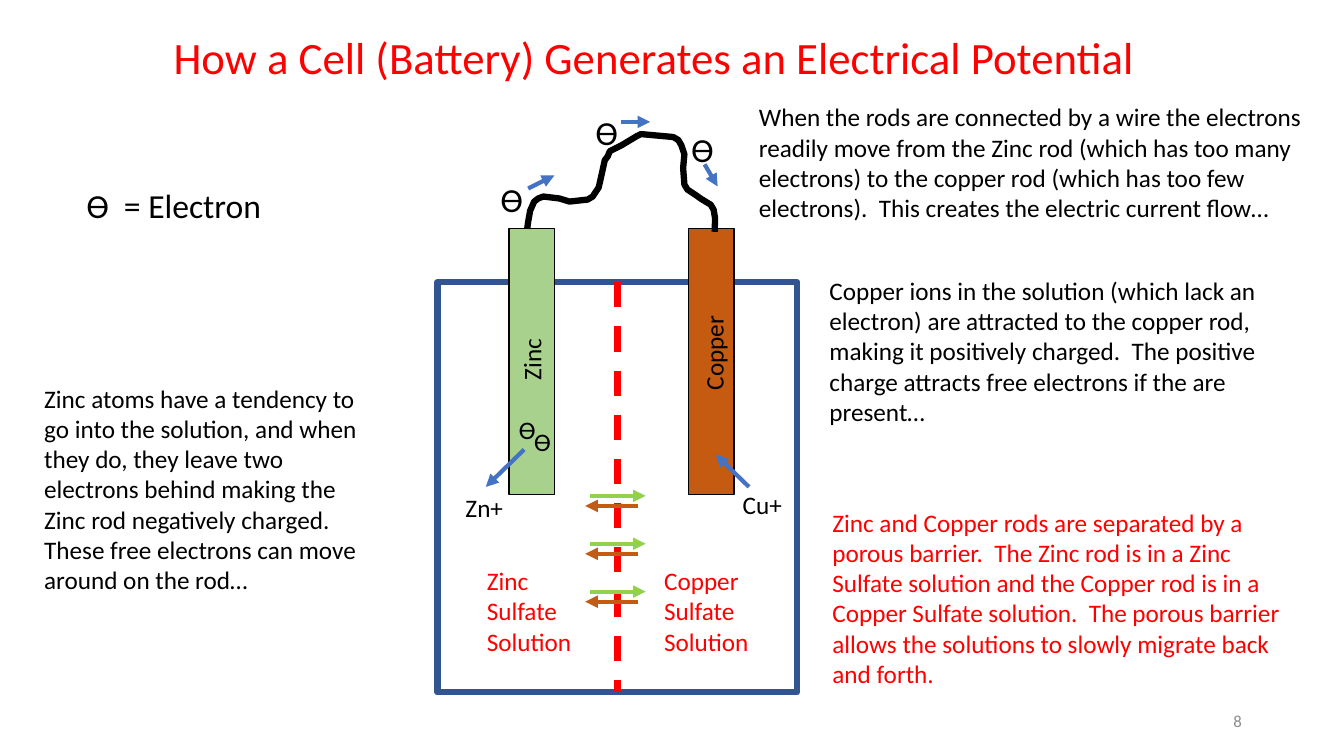
from dataclasses import dataclass

from lxml.etree import SubElement
from pptx import Presentation
from pptx.dml.color import RGBColor
from pptx.enum.dml import MSO_LINE
from pptx.enum.shapes import MSO_CONNECTOR, MSO_SHAPE
from pptx.enum.text import MSO_ANCHOR, MSO_AUTO_SIZE, PP_ALIGN
from pptx.oxml.ns import qn
from pptx.util import Pt


@dataclass(frozen=True)
class Theme:
    font: str = "Calibri"
    black: str = "000000"
    red: str = "FF0000"
    gray: str = "8C8C8C"
    tank: str = "325491"
    zinc: str = "A9D18E"
    copper: str = "C55A11"
    green: str = "92D050"
    blue: str = "4472C4"
    title: int = 32
    large: int = 24
    body: int = 18
    small: int = 12
    heavy: float = 4.5
    arrow: float = 3
    thin: float = 1


class CellSlide:
    def __init__(self, slide, theme):
        self.shapes = slide.shapes
        self.theme = theme

    def text(self, text, left, top, width, height, *, size=None, color=None,
             align=PP_ALIGN.LEFT, anchor=MSO_ANCHOR.TOP, spacing=None,
             rotation=0, wrap=True, grow=True):
        box = self.shapes.add_textbox(Pt(left), Pt(top), Pt(width), Pt(height))
        box.rotation = rotation
        frame = box.text_frame
        frame.word_wrap = wrap
        frame.auto_size = MSO_AUTO_SIZE.SHAPE_TO_FIT_TEXT if grow else MSO_AUTO_SIZE.NONE
        frame.vertical_anchor = anchor
        paragraph = frame.paragraphs[0]
        paragraph.alignment = align
        paragraph.line_spacing = spacing
        run = paragraph.add_run()
        run.text = text
        run.font.name = self.theme.font
        run.font.size = Pt(size or self.theme.body)
        run.font.color.rgb = RGBColor.from_string(color or self.theme.black)

    def stroke(self, item, color, weight):
        item.line.color.rgb = RGBColor.from_string(color)
        item.line.width = Pt(weight)

    def rectangle(self, left, top, width, height, line, weight, fill=None):
        rect = self.shapes.add_shape(
            MSO_SHAPE.RECTANGLE, Pt(left), Pt(top), Pt(width), Pt(height))
        rect.shadow.inherit = False
        if fill:
            rect.fill.solid()
            rect.fill.fore_color.rgb = RGBColor.from_string(fill)
        else:
            rect.fill.background()
        self.stroke(rect, line, weight)
        return rect

    def line(self, start, end, color, weight):
        connector = self.shapes.add_connector(
            MSO_CONNECTOR.STRAIGHT, *(Pt(v) for v in (*start, *end)))
        self.stroke(connector, color, weight)
        SubElement(connector._element.spPr, qn("a:effectLst"))
        return connector

    def arrow(self, start, end, color):
        connector = self.line(start, end, color, self.theme.arrow)
        SubElement(connector.line._get_or_add_ln(), qn("a:tailEnd"), type="triangle")

    def curve(self, points, color, weight):
        first, *rest = [(Pt(x), Pt(y)) for x, y in points]
        builder = self.shapes.build_freeform(*first)
        builder.add_line_segments(rest, close=False)
        outline = builder.convert_to_shape()
        outline.shadow.inherit = False
        outline.fill.background()
        self.stroke(outline, color, weight)
        SubElement(outline.line._get_or_add_ln(), qn("a:round"))


WIRE = [
    (376.6, 163.4), (377.3, 158.4), (378.7, 150.5), (381.6, 144), (384.5, 141.8),
    (388.1, 140.4), (399.6, 141.8), (406.8, 144), (419.8, 142.6), (423.4, 140.4),
    (427.7, 133.9), (429.8, 124.6), (430.6, 121), (432, 114.5), (434.2, 111.6),
    (435.6, 108), (444.2, 103.7), (455, 97.2), (457.9, 95.8), (481, 97.9),
    (484.5, 100), (486.7, 103.7), (488.9, 110.2), (488, 120), (488.9, 131.8),
    (491, 135.4), (497.5, 139.7), (500.4, 141.8), (504, 144), (507.6, 146.2),
    (509.8, 149.8), (510.8, 156), (510.5, 165.6),
]


def main():
    deck = Presentation()
    deck.slide_width, deck.slide_height = Pt(960), Pt(540)
    theme = Theme()
    cell = CellSlide(deck.slides.add_slide(deck.slide_layouts[6]), theme)

    # Title and slide number
    cell.text("8", 678.2, 500.4, 216, 28.8, size=theme.small, color=theme.gray,
              align=PP_ALIGN.RIGHT, anchor=MSO_ANCHOR.MIDDLE, grow=False)
    cell.text("How a Cell (Battery) Generates an Electrical Potential",
              77, 22.3, 780.5, 46.8, size=theme.title, color=theme.red,
              align=PP_ALIGN.CENTER, spacing=0.9, grow=False)

    # Tank with its porous barrier
    tank = cell.rectangle(312.5, 201.6, 257, 293, theme.tank, theme.heavy)
    barrier = cell.line((441, 201.6), (441, 494.6), theme.red, theme.heavy)
    barrier.begin_connect(tank, 0)
    barrier.end_connect(tank, 2)
    barrier.line.dash_style = MSO_LINE.DASH

    # Rods, their labels and the solutions around them
    for metal, fill, rod_left, label_left, label_top, solution, solution_left in (
        ("Zinc", theme.zinc, 363.6, 340.6, 225.4, "Zinc  Sulfate Solution", 340.6),
        ("Copper", theme.copper, 491.8, 470.9, 232.6, "Copper Sulfate Solution", 467.3),
    ):
        cell.rectangle(rod_left, 163.4, 32.4, 190, theme.black, theme.thin, fill)
        cell.text(metal, label_left, label_top, 77.8, 28.8, rotation=270)
        cell.text(solution, solution_left, 400.3, 77.8, 72.7, color=theme.red)

    # Legend
    cell.text("ϴ  = Electron", 54.7, 128.9, 164.2, 36, size=theme.large)

    # Migration through the barrier
    for row in range(3):
        y = 354.2 + 34.2 * row
        cell.arrow((456, y + 7.2), (418, y + 7.2), theme.copper)
        cell.arrow((421.5, y), (461.2, y), theme.green)

    # Ions, and the electrons left on the zinc rod
    cell.text("Cu+", 523.4, 346.3, 43.9, 28.8, wrap=False)
    cell.text("Zn+", 325.4, 347.8, 43.9, 28.8, wrap=False)
    for left, top in ((363.6, 292.3), (374.4, 301)):
        cell.text("ϴ", left, top, 29.5, 28.8)
    cell.arrow((535, 347.8), (511.2, 324.7), theme.blue)
    cell.arrow((374.4, 321.1), (347, 347.8), theme.blue)

    # Wire with the electrons moving along it
    cell.curve(WIRE, theme.black, theme.heavy)
    for left, top, start, end in (
        (350.6, 124.6, (377.3, 134.6), (396, 125.3)),
        (418.3, 76.3, (443.5, 87.1), (464.4, 87.1)),
        (486.7, 88.6, (503.3, 117.4), (512.6, 133.2)),
    ):
        cell.text("ϴ", left, top, 32.4, 36, size=theme.large)
        cell.arrow(start, end, theme.blue)

    # Explanations
    cell.text("Zinc atoms have a tendency to go into the solution, and when they do, "
              "they leave two electrons behind making the Zinc rod negatively charged.   "
              "These free electrons can move around on the rod…",
              24.5, 270, 256.3, 159.8)
    cell.text("When the rods are connected by a wire the electrons readily move from "
              "the Zinc rod (which has too many electrons) to the copper rod (which has "
              "too few electrons).  This creates the electric current flow…",
              535, 69.1, 409, 94.3)
    cell.text("Copper ions in the solution (which lack an electron) are attracted to "
              "the copper rod, making it positively charged.  The positive charge "
              "attracts free electrons if the are present…",
              585.4, 193, 348.5, 116.6)
    cell.text("Zinc and Copper rods are separated by a porous barrier.  The Zinc rod is "
              "in a Zinc Sulfate solution and the Copper rod is in a Copper Sulfate "
              "solution.  The porous barrier allows the solutions to slowly migrate "
              "back and forth.",
              587.5, 358.6, 348.5, 159.8, color=theme.red)

    deck.save("out.pptx")


if __name__ == "__main__":
    main()
